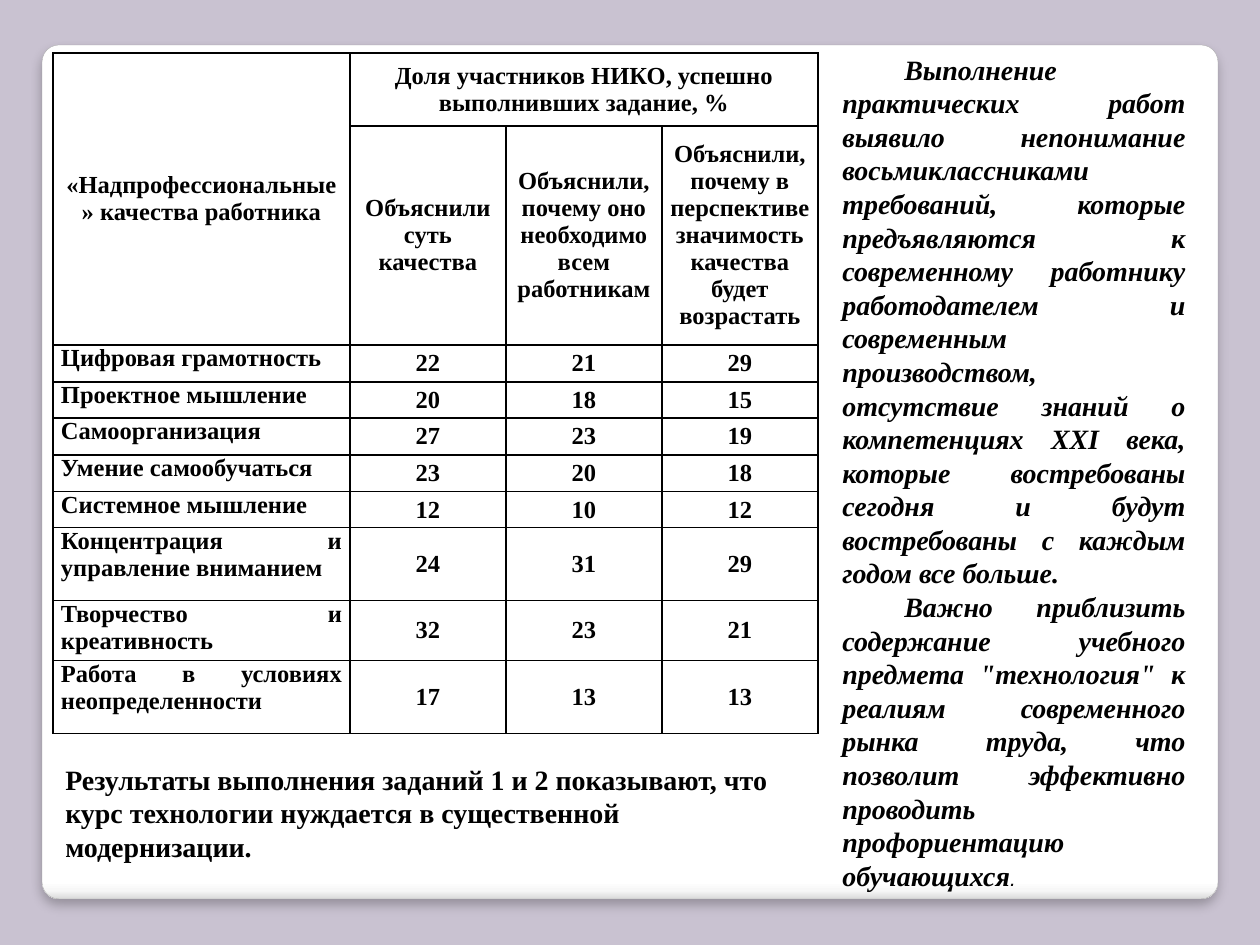
from lxml import etree
from pptx import Presentation
from pptx import util as u
from pptx.dml.color import RGBColor
from pptx.enum import shapes, text
from pptx.oxml import parse_xml
from pptx.oxml.ns import nsdecls, qn

BLACK = RGBColor(0x00, 0x00, 0x00)
LILAC = RGBColor(0xC9, 0xC2, 0xD1)
GREY = RGBColor(0xA4, 0xA4, 0xA4)
SERIF = "Times New Roman"
CENTER, JUSTIFY = text.PP_ALIGN.CENTER, text.PP_ALIGN.JUSTIFY
MIDDLE, TOP = text.MSO_ANCHOR.MIDDLE, text.MSO_ANCHOR.TOP

COLUMN_WIDTHS = [297, 156, 156, 156]
ROW_HEIGHTS = [73, 219, 37, 36, 37, 37, 36, 73, 60, 73]
CORNER = "«Надпрофессиональные» качества работника"
GROUP = "Доля участников НИКО, успешно выполнивших задание,\u00a0%"
HEADINGS = [
    "Объяснили суть качества",
    "Объяснили, почему оно необходимо всем работникам",
    "Объяснили, почему в перспективе значимость качества будет возрастать",
]
RESULTS = [
    ("Цифровая грамотность", 22, 21, 29),
    ("Проектное мышление", 20, 18, 15),
    ("Самоорганизация", 27, 23, 19),
    ("Умение самообучаться", 23, 20, 18),
    ("Системное мышление", 12, 10, 12),
    ("Концентрация и управление вниманием", 24, 31, 29),
    ("Творчество и креативность", 32, 23, 21),
    ("Работа в условиях неопределенности", 17, 13, 13),
]
FINDINGS = (
    "Выполнение практических работ выявило непонимание восьмиклассниками "
    "требований, которые предъявляются к современному работнику работодателем "
    "и современным производством, отсутствие знаний о компетенциях XXI века, "
    "которые востребованы сегодня и будут востребованы с каждым годом все больше. "
)
ADVICE = (
    'Важно приблизить содержание учебного предмета "технология" к реалиям '
    "современного рынка труда, что позволит эффективно проводить "
    "профориентацию обучающихся"
)
CONCLUSION = (
    "Результаты выполнения заданий 1 и 2 показывают, что курс технологии "
    "нуждается в существенной модернизации."
)


def px(count):
    return u.Emu(round(count * 914400 / 126))


def add_span(para, words, size=16, font=SERIF, bold=True, italic=False):
    span = para.add_run()
    span.text = words
    span.font.name, span.font.size = font, u.Pt(size)
    span.font.bold, span.font.italic = bold, italic
    span.font.color.rgb = BLACK


def add_panel(page, left, top, width, height):
    """White rounded panel with a darker lower edge and a soft shadow."""
    panel = page.shapes.add_shape(
        shapes.MSO_SHAPE.ROUNDED_RECTANGLE, px(left), px(top), px(width), px(height))
    panel.adjustments[0] = 0.02
    panel.line.color.rgb = GREY
    panel.line.width = u.Pt(0.16)
    panel.fill.gradient()
    panel.fill.gradient_angle = 270
    stops = panel.fill._fill._gradFill.find(qn("a:gsLst"))
    for stop in list(stops):
        stops.remove(stop)
    for percent, color in [(0, "FFFFFF"), (98, "FFFFFF"), (99, "F7F7F7"), (100, "DADADA")]:
        stop = etree.SubElement(stops, qn("a:gs"), pos=str(percent * 1000))
        etree.SubElement(stop, qn("a:srgbClr"), val=color)
    panel.shadow.inherit = False
    panel._element.spPr.find(qn("a:effectLst")).append(parse_xml(
        f'<a:outerShdw {nsdecls("a")} blurRad="{u.Pt(6)}" dist="{u.Pt(4)}" '
        'dir="5400000" algn="t" rotWithShape="0"><a:srgbClr val="000000">'
        '<a:alpha val="25000"/></a:srgbClr></a:outerShdw>'))


def add_borders(cell):
    properties = cell._tc.get_or_add_tcPr()
    for index, side in enumerate(("lnL", "lnR", "lnT", "lnB")):
        properties.insert(index, parse_xml(
            f'<a:{side} {nsdecls("a")} w="{u.Pt(1)}"><a:solidFill>'
            f'<a:srgbClr val="{BLACK}"/></a:solidFill></a:{side}>'))


def fill_cell(cell, words, align=CENTER, anchor=MIDDLE):
    cell.vertical_anchor = anchor
    para = cell.text_frame.paragraphs[0]
    para.alignment = align
    add_span(para, words, size=14)


def add_results(page, left, top):
    frame = page.shapes.add_table(
        len(ROW_HEIGHTS), len(COLUMN_WIDTHS), px(left), px(top),
        px(sum(COLUMN_WIDTHS)), px(sum(ROW_HEIGHTS)))
    table = frame.table
    table.first_row = table.horz_banding = False
    for column, width in zip(table.columns, COLUMN_WIDTHS):
        column.width = px(width)
    for row, height in zip(table.rows, ROW_HEIGHTS):
        row.height = px(height)
    for cell in table.iter_cells():
        cell.fill.background()
        add_borders(cell)
        cell.margin_left = cell.margin_right = px(8)
        cell.margin_top = cell.margin_bottom = 0

    table.cell(0, 0).merge(table.cell(1, 0))
    table.cell(0, 1).merge(table.cell(0, 3))
    fill_cell(table.cell(0, 0), CORNER)
    fill_cell(table.cell(0, 1), GROUP)
    for column, heading in enumerate(HEADINGS, 1):
        fill_cell(table.cell(1, column), heading)
    for row, (quality, *shares) in enumerate(RESULTS, 2):
        fill_cell(table.cell(row, 0), quality, JUSTIFY, TOP)
        for column, share in enumerate(shares, 1):
            fill_cell(table.cell(row, column), str(share))


def add_text_frame(page, left, top, width, height, anchor=TOP):
    box = page.shapes.add_textbox(px(left), px(top), px(width), px(height))
    frame = box.text_frame
    frame.word_wrap = True
    frame.auto_size = text.MSO_AUTO_SIZE.SHAPE_TO_FIT_TEXT
    frame.vertical_anchor = anchor
    return frame


def add_commentary(page, left, top, width, height):
    frame = add_text_frame(page, left, top, width, height, MIDDLE)
    for para, words in [(frame.paragraphs[0], FINDINGS), (frame.add_paragraph(), ADVICE)]:
        para.alignment = JUSTIFY
        para._p.get_or_add_pPr().set("indent", str(px(62)))
        add_span(para, words, italic=True)
    add_span(para, ".", size=12, font="Arial", bold=False, italic=True)


def add_conclusion(page, left, top, width, height):
    frame = add_text_frame(page, left, top, width, height)
    add_span(frame.paragraphs[0], CONCLUSION)


def main():
    deck = Presentation()
    deck.slide_width, deck.slide_height = px(1260), px(945)
    page = deck.slides.add_slide(deck.slide_layouts[6])
    page.background.fill.solid()
    page.background.fill.fore_color.rgb = LILAC
    add_panel(page, 42, 45, 1176, 854)
    add_results(page, 53, 53)
    add_commentary(page, 830, 42, 368, 860)
    add_conclusion(page, 53, 756, 766, 152)
    deck.save("out.pptx")


if __name__ == "__main__":
    main()
